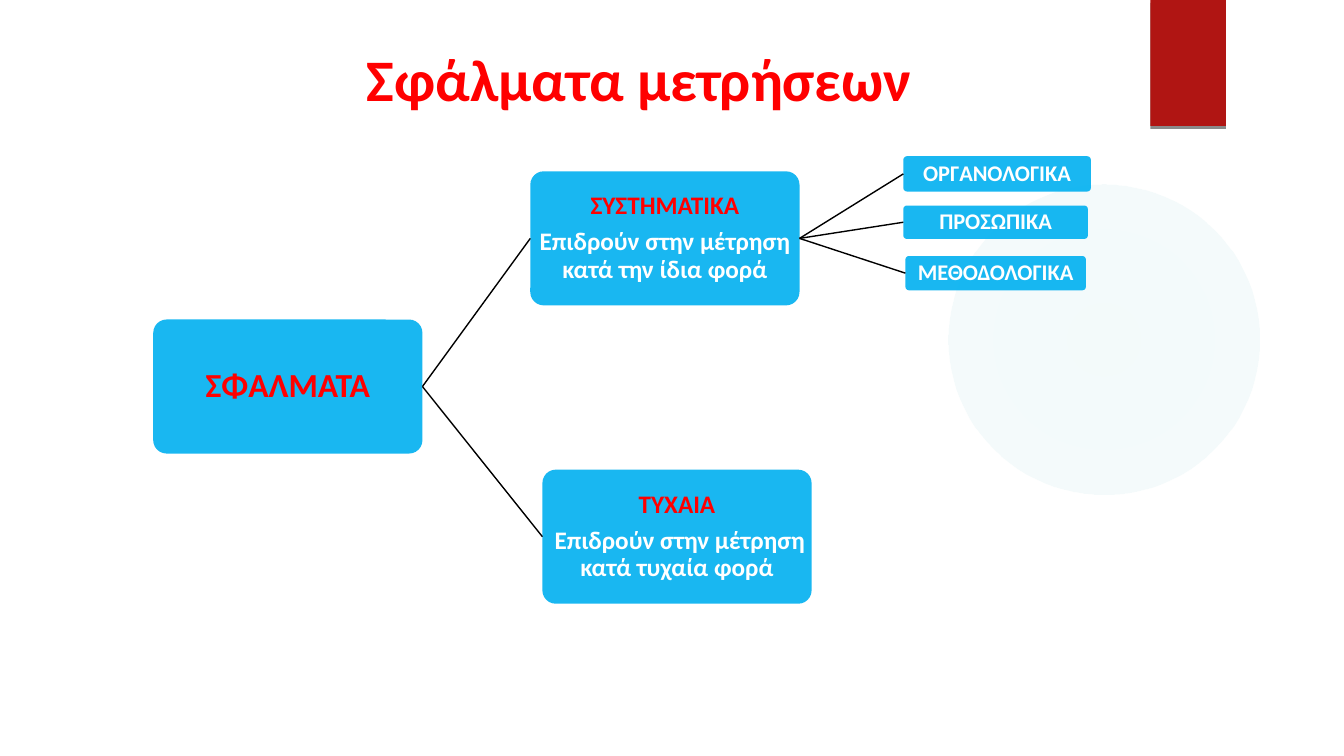
import pptx
import pptx.util
import pptx.oxml
import pptx.oxml.ns
import pptx.dml.color
import pptx.enum.shapes
import pptx.enum.text

Inches, Pt = pptx.util.Inches, pptx.util.Pt
SHAPE = pptx.enum.shapes.MSO_SHAPE
HUES = {"red": "FF0000", "white": "FFFFFF", "black": "000000",
        "node": "00B0F0", "tab": "B01513", "glow": "50B9C1"}
NS = pptx.oxml.ns.nsdecls("a")


def rgb(name):
    return pptx.dml.color.RGBColor.from_string(HUES[name])


def write(frame, text, first=True, size=18, hue="white", after=0, line=None):
    """Put one centred bold paragraph into a text frame."""
    para = frame.paragraphs[0] if first else frame.add_paragraph()
    para.text = text
    para.alignment = pptx.enum.text.PP_ALIGN.CENTER
    para.space_before = Pt(0)
    para.space_after = Pt(after)
    if line:
        para.line_spacing = line
    font = para.font
    font.name, font.size, font.bold = "Calibri", Pt(size), True
    font.color.rgb = rgb(hue)


def block(slide, kind, box, hue):
    """Add a plain filled shape without outline or shadow."""
    shape = slide.shapes.add_shape(kind, *map(Inches, box))
    shape.shadow.inherit = False
    shape.fill.solid()
    shape.fill.fore_color.rgb = rgb(hue)
    shape.line.fill.background()
    return shape


def decor(slide, disc, tab):
    """Faint radial disc and the red tab with its hard shadow."""
    oval = block(slide, SHAPE.OVAL, disc, "glow")
    stops = "".join(
        f'<a:gs pos="{pos}"><a:srgbClr val="{HUES["glow"]}">'
        f'<a:alpha val="{alpha}"/></a:srgbClr></a:gs>'
        for pos, alpha in ((0, 7000), (100000, 6000)))
    grad = pptx.oxml.parse_xml(
        f'<a:gradFill {NS}><a:gsLst>{stops}</a:gsLst><a:path path="circle">'
        '<a:fillToRect l="50000" t="50000" r="50000" b="50000"/>'
        '</a:path></a:gradFill>')
    props = oval.element.spPr
    props.replace(props.find(pptx.oxml.ns.qn("a:solidFill")), grad)

    flag = block(slide, SHAPE.RECTANGLE, tab, "tab")
    effect = flag.element.spPr.find(pptx.oxml.ns.qn("a:effectLst"))
    effect.append(pptx.oxml.parse_xml(
        f'<a:outerShdw {NS} blurRad="0" dist="25400" dir="5400000">'
        f'<a:srgbClr val="{HUES["black"]}"><a:alpha val="45000"/></a:srgbClr>'
        '</a:outerShdw>'))


def head(slide, box, text):
    title = slide.shapes.title
    title.left, title.top, title.width, title.height = map(Inches, box)
    frame = title.text_frame
    frame.word_wrap = True
    frame.vertical_anchor = pptx.enum.text.MSO_ANCHOR.MIDDLE
    frame.margin_left = Inches(0.66)
    frame.margin_right = frame.margin_bottom = 0
    frame.margin_top = Inches(0.01)
    write(frame, text, size=42, hue="red")


def node(slide, box, lines):
    """Rounded box; lines are (text, size, hue)."""
    shape = block(slide, SHAPE.ROUNDED_RECTANGLE, box, "node")
    shape.adjustments[0] = 0.1
    color = shape.element.spPr.find(".//" + pptx.oxml.ns.qn("a:srgbClr"))
    color.append(pptx.oxml.parse_xml(f'<a:alpha {NS} val="90000"/>'))
    frame = shape.text_frame
    frame.word_wrap = True
    frame.vertical_anchor = pptx.enum.text.MSO_ANCHOR.MIDDLE
    frame.margin_left = frame.margin_right = Inches(0.01)
    frame.margin_top = frame.margin_bottom = Inches(0.01)
    for i, (text, size, hue) in enumerate(lines):
        after = 0.35 * size if i < len(lines) - 1 else 0
        write(frame, text, first=i == 0, size=size, hue=hue,
              after=after, line=0.9)
    return shape


def link(slide, start, end):
    """Join the right side of one node to the left side of another."""
    wire = slide.shapes.add_connector(
        pptx.enum.shapes.MSO_CONNECTOR.STRAIGHT, 0, 0, 0, 0)
    wire.begin_connect(start, 3)
    wire.end_connect(end, 1)
    wire.line.color.rgb = rgb("black")
    wire.line.width = Pt(1)
    wire.element.spPr.append(pptx.oxml.parse_xml(f"<a:effectLst {NS}/>"))


def tree(slide, left, top):
    """Error tree, placed from the top left corner of its area."""
    def place(x, y, w, h, *lines):
        return node(slide, (left + x, top + y, w, h), lines)

    big = (2.67, 1.33)
    root = place(0, 1.62, *big, ("ΣΦΑΛΜΑΤΑ", 24, "red"))
    kinds = [
        (3.74, 0.15, "ΣΥΣΤΗΜΑΤΙΚΑ",
         "Επιδρούν στην μέτρηση κατά την ίδια φορά"),
        (3.86, 3.11, "ΤΥΧΑΙΑ",
         " Επιδρούν στην μέτρηση κατά τυχαία φορά")]
    mids = [place(x, y, *big, (name, 18, "red"), (note, 18, "white"))
            for x, y, name, note in kinds]
    for mid in mids:
        link(slide, root, mid)

    leaves = [(7.44, 0, 1.86, 0.35, "ΟΡΓΑΝΟΛΟΓΙΚΑ"),
              (7.44, 0.49, 1.83, 0.33, "ΠΡΟΣΩΠΙΚΑ"),
              (7.46, 0.99, 1.79, 0.34, "ΜΕΘΟΔΟΛΟΓΙΚΑ")]
    for *box, name in leaves:
        link(slide, mids[0], place(*box, (name, 16, "white")))


def main():
    deck = pptx.Presentation()
    deck.slide_width, deck.slide_height = Inches(13.33), Inches(7.5)
    slide = deck.slides.add_slide(deck.slide_layouts[5])
    decor(slide, disc=(9.41, 1.83, 3.08, 3.08), tab=(11.41, 0, 0.75, 1.25))
    head(slide, (0.87, 0, 10.28, 1.53), "Σφάλματα μετρήσεων")
    tree(slide, 1.52, 1.55)
    deck.save("out.pptx")


if __name__ == "__main__":
    main()
